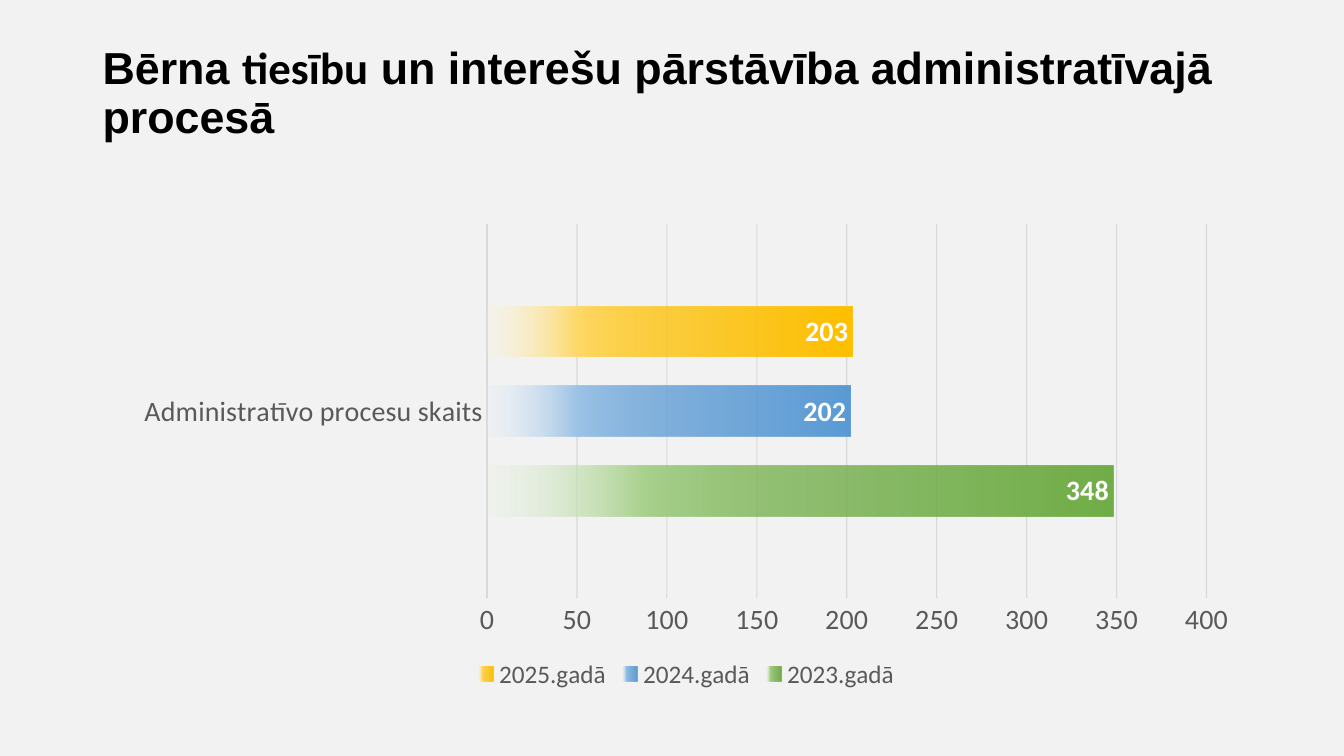
from lxml import etree
from pptx import Presentation
from pptx.chart.data import CategoryChartData
from pptx.dml.color import RGBColor
from pptx.enum.chart import XL_CHART_TYPE as ChartType
from pptx.enum.chart import XL_LABEL_POSITION as LabelPosition
from pptx.enum.chart import XL_LEGEND_POSITION as LegendPosition
from pptx.enum.chart import XL_TICK_MARK as TickMark
from pptx.enum.text import MSO_ANCHOR, MSO_AUTO_SIZE, PP_ALIGN
from pptx.oxml import parse_xml
from pptx.oxml.ns import nsdecls, qn
from pptx.util import Cm, Pt

BACKGROUND = RGBColor(0xF2, 0xF2, 0xF2)
BLACK = RGBColor(0x00, 0x00, 0x00)
WHITE = RGBColor(0xFF, 0xFF, 0xFF)
GRAY = RGBColor(0x59, 0x59, 0x59)
AXIS_GRAY = RGBColor(0xD9, 0xD9, 0xD9)
GRID_GRAY = RGBColor(0xBF, 0xBF, 0xBF)
GREEN = RGBColor(0x70, 0xAD, 0x47)
GREEN_MID = RGBColor(0xA9, 0xD1, 0x8E)
GREEN_PALE = RGBColor(0xE2, 0xF0, 0xD9)
BLUE = RGBColor(0x5B, 0x9B, 0xD5)
BLUE_MID = RGBColor(0x9D, 0xC3, 0xE6)
BLUE_PALE = RGBColor(0xDE, 0xEB, 0xF7)
YELLOW = RGBColor(0xFF, 0xC0, 0x00)
YELLOW_MID = RGBColor(0xFF, 0xD9, 0x66)
YELLOW_PALE = RGBColor(0xFF, 0xF2, 0xCC)

TITLE_SPANS = [
    ("Bērna ", "Arial"),
    ("tiesību", "Calibri"),
    (" un interešu pārstāvība administratīvajā procesā", "Arial"),
]
YEARS = [
    ("2023.gadā", 348, (GREEN, GREEN_MID, GREEN_PALE)),
    ("2024.gadā", 202, (BLUE, BLUE_MID, BLUE_PALE)),
    ("2025.gadā", 203, (YELLOW, YELLOW_MID, YELLOW_PALE)),
]


def style_font(font, size, color, name="Calibri", bold=False):
    font.size = Pt(size)
    font.name = name
    font.bold = bold
    font.color.rgb = color


def add_title(page):
    title = page.shapes.title
    title.left, title.top, title.width, title.height = Cm(2.33), Cm(1.01), Cm(29.21), Cm(2.75)
    frame = title.text_frame
    frame.word_wrap = True
    frame.auto_size = MSO_AUTO_SIZE.NONE
    frame.vertical_anchor = MSO_ANCHOR.MIDDLE
    para = frame.paragraphs[0]
    para.alignment = PP_ALIGN.LEFT
    para.line_spacing = 0.9
    for text, font_name in TITLE_SPANS:
        span = para.add_run()
        span.text = text
        style_font(span.font, 32, BLACK, font_name, bold=True)


def fade_fill(series, colors):
    """Fill the bars with a gradient that fades out towards the axis."""
    strong, middle, pale = colors
    stops = [(0, strong, 100), (51, strong, 75), (75, middle, 100), (100, pale, 15)]
    stop_xml = "".join(
        f'<a:gs pos="{place * 1000}"><a:srgbClr val="{color}">'
        f'<a:alpha val="{opacity * 1000}"/></a:srgbClr></a:gs>'
        for place, color, opacity in stops
    )
    properties = series.format.fill._xPr
    properties.insert(0, parse_xml(
        f'<a:gradFill {nsdecls("a")}><a:gsLst>{stop_xml}</a:gsLst>'
        '<a:lin ang="10800000" scaled="0"/></a:gradFill>'
    ))


def style_series(series, colors):
    fade_fill(series, colors)
    labels = series.data_labels
    labels.show_value = True
    labels.position = LabelPosition.INSIDE_END
    style_font(labels.font, 20, WHITE, bold=True)


def style_axes(chart):
    for axis in (chart.category_axis, chart.value_axis):
        axis.major_tick_mark = axis.minor_tick_mark = TickMark.NONE
        style_font(axis.tick_labels.font, 20, GRAY)
    category_line = chart.category_axis.format.line
    category_line.color.rgb = AXIS_GRAY
    category_line.width = Pt(1.5)

    values = chart.value_axis
    values.minimum_scale, values.maximum_scale, values.major_unit = 0, 400, 50
    values.format.line.fill.background()
    values.has_major_gridlines = True
    grid = values.major_gridlines.format.line
    grid.color.rgb = GRID_GRAY
    grid.width = Pt(0.75)
    for color in values.major_gridlines._xAx.iterfind(
        f"{qn('c:majorGridlines')}//{qn('a:srgbClr')}"
    ):
        etree.SubElement(color, qn("a:alpha")).set("val", "50000")


def add_year_chart(page):
    data = CategoryChartData()
    data.categories = ["Administratīvo procesu skaits"]
    for name, value, _ in YEARS:
        data.add_series(name, [value])
    chart = page.shapes.add_chart(
        ChartType.BAR_CLUSTERED, Cm(3.07), Cm(5.41), Cm(28.45), Cm(12.09), data
    ).chart
    chart.has_title = False
    style_font(chart.font, 20, BLACK)
    plot = chart.plots[0]
    plot.vary_by_categories = False
    plot.gap_width = 326
    plot.overlap = -58
    for series, (_, _, colors) in zip(plot.series, YEARS):
        style_series(series, colors)
    style_axes(chart)
    chart.has_legend = True
    chart.legend.position = LegendPosition.BOTTOM
    chart.legend.include_in_layout = False
    style_font(chart.legend.font, 18, GRAY)


def main():
    deck = Presentation()
    deck.slide_width, deck.slide_height = Cm(33.87), Cm(19.05)
    page = deck.slides.add_slide(deck.slide_layouts[5])
    page.background.fill.solid()
    page.background.fill.fore_color.rgb = BACKGROUND
    add_title(page)
    add_year_chart(page)
    deck.save("out.pptx")


if __name__ == "__main__":
    main()
